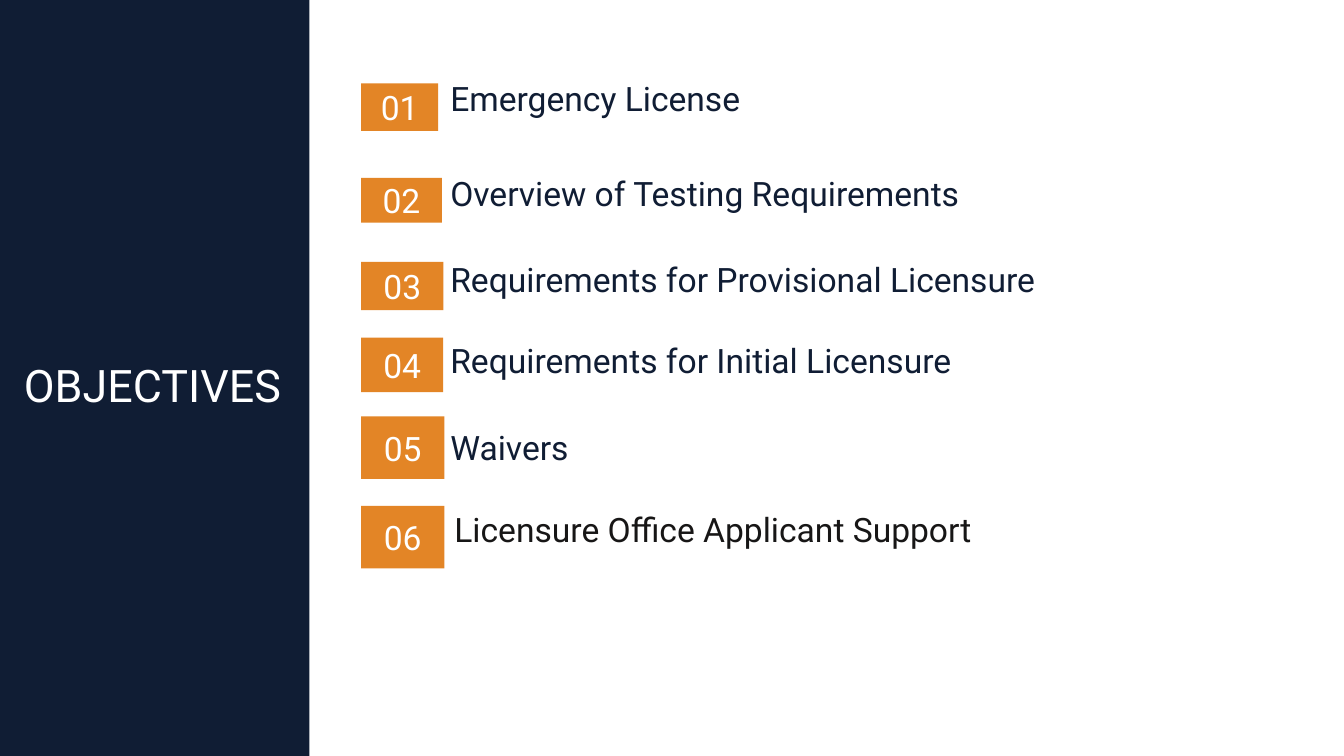
from dataclasses import dataclass
from typing import NamedTuple

from pptx import Presentation
from pptx.dml.color import RGBColor
from pptx.enum.shapes import MSO_SHAPE
from pptx.enum.text import MSO_ANCHOR, PP_ALIGN
from pptx.util import Pt


@dataclass(frozen=True)
class Theme:
    navy: str = "101D34"
    orange: str = "E38526"
    black: str = "171616"
    white: str = "FFFFFF"
    font: str = "Roboto"
    title_size: int = 32
    item_size: int = 24


class Box(NamedTuple):
    """Left, top, width and height in points."""
    left: float
    top: float
    width: float
    height: float

    def lengths(self):
        return [Pt(value) for value in self]


class SlideBuilder:
    def __init__(self, slide, theme):
        self.slide = slide
        self.theme = theme

    def panel(self, box, color):
        panel = self.slide.shapes.add_shape(MSO_SHAPE.RECTANGLE, *box.lengths())
        panel.shadow.inherit = False
        panel.fill.solid()
        panel.fill.fore_color.rgb = RGBColor.from_string(color)
        panel.line.fill.background()
        return panel

    def badge(self, box, number):
        badge = self.panel(box, self.theme.orange)
        self.style_text(badge.text_frame, number, self.theme.item_size,
                        self.theme.white, PP_ALIGN.CENTER)

    def label(self, box, text, size, color, align=PP_ALIGN.LEFT):
        label = self.slide.shapes.add_textbox(*box.lengths())
        self.style_text(label.text_frame, text, size, color, align)

    def style_text(self, frame, text, size, color, align):
        frame.word_wrap = True
        frame.vertical_anchor = MSO_ANCHOR.MIDDLE
        frame.text = text
        paragraph = frame.paragraphs[0]
        paragraph.alignment = align
        font = paragraph.runs[0].font
        font.name = self.theme.font
        font.size = Pt(size)
        font.color.rgb = RGBColor.from_string(color)


def main():
    theme = Theme()
    presentation = Presentation()
    presentation.slide_width = Pt(960)
    presentation.slide_height = Pt(540)
    slide = presentation.slides.add_slide(presentation.slide_layouts[6])
    builder = SlideBuilder(slide, theme)

    builder.panel(Box(0, 0, 221, 540), theme.navy)
    builder.label(Box(0, 251.5, 218, 46), "OBJECTIVES", theme.title_size,
                  theme.white, PP_ALIGN.CENTER)

    objectives = [
        ("Emergency License", theme.navy,
         Box(258, 59.5, 55, 34), Box(314.6, 38, 626, 64)),
        ("Overview of Testing Requirements", theme.navy,
         Box(258, 127, 57.6, 32), Box(314.6, 110, 628, 55.5)),
        ("Requirements for Provisional Licensure", theme.navy,
         Box(258, 187, 58.8, 34.6), Box(314.6, 169, 631.5, 60)),
        ("Requirements for Initial Licensure", theme.navy,
         Box(258, 241.2, 58.6, 39), Box(314.6, 206, 628.5, 103)),
        ("Waivers", theme.navy,
         Box(258, 297.5, 59.4, 44.6), Box(314.6, 301, 289, 36)),
        ("Licensure Office Applicant Support", theme.black,
         Box(258, 361.4, 59.4, 44.6), Box(317.5, 353, 629, 50.4)),
    ]
    for number, (topic, color, badge_box, topic_box) in enumerate(objectives, 1):
        builder.badge(badge_box, f"{number:02d}")
        builder.label(topic_box, topic, theme.item_size, color)

    presentation.save("out.pptx")


if __name__ == "__main__":
    main()
